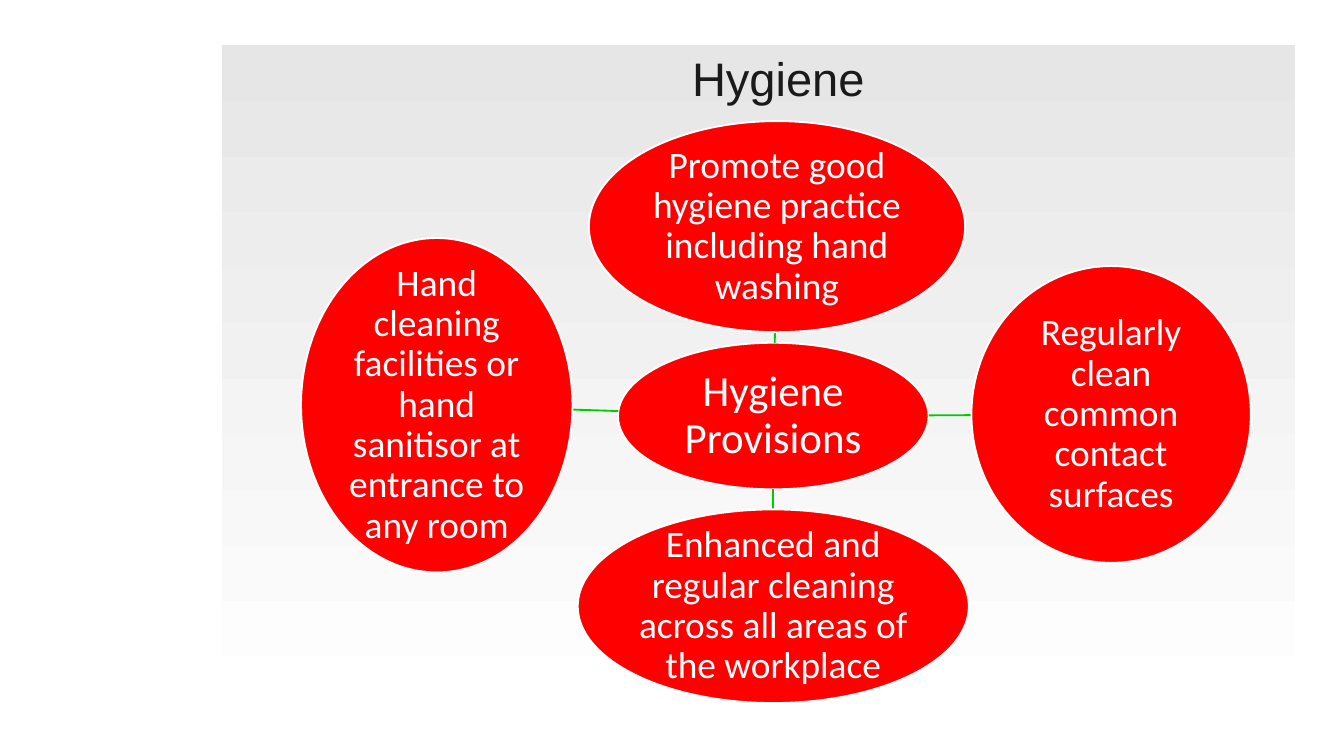
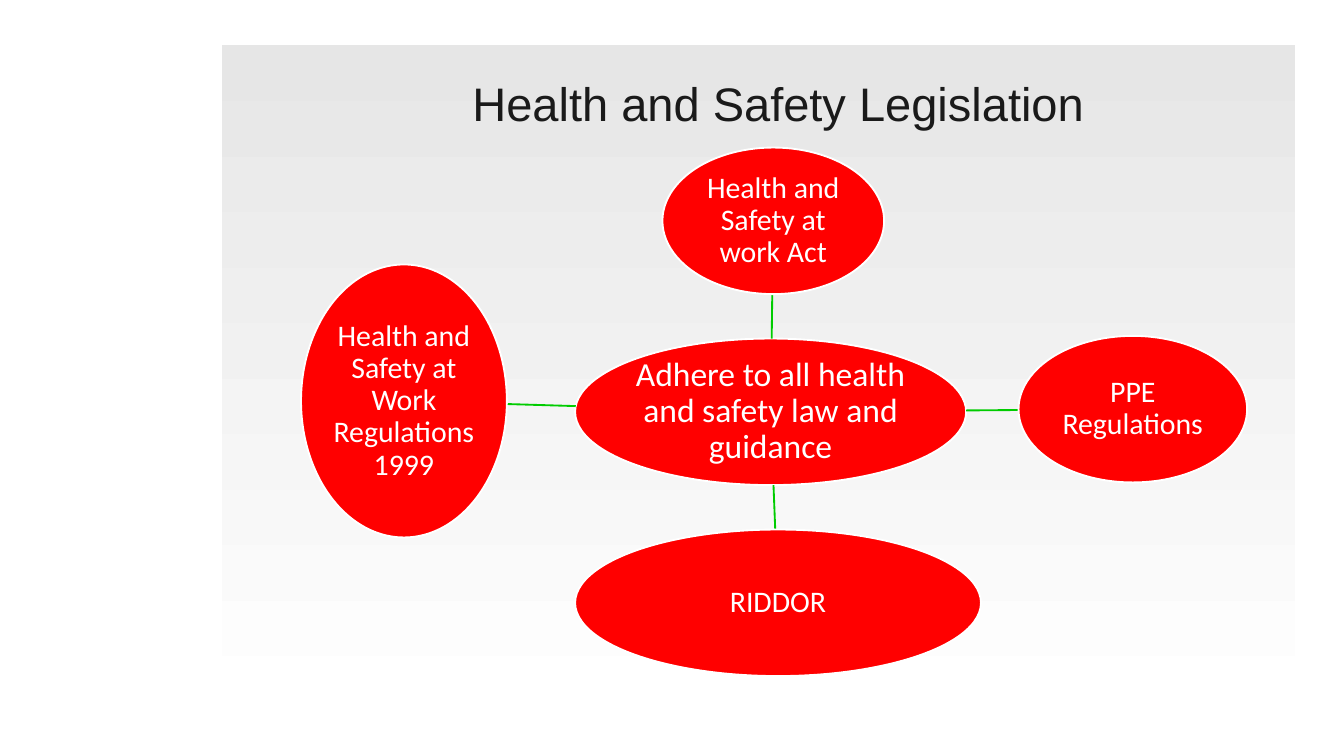
from dataclasses import dataclass
from math import hypot

from lxml.etree import SubElement
from pptx import Presentation
from pptx.dml.color import RGBColor
from pptx.enum.shapes import MSO_CONNECTOR, MSO_SHAPE
from pptx.enum.text import MSO_ANCHOR, PP_ALIGN
from pptx.oxml.ns import qn
from pptx.slide import Slide
from pptx.text.text import TextFrame
from pptx.util import Cm, Pt


@dataclass(frozen=True)
class Theme:
    bubble: RGBColor = RGBColor(0xFF, 0x00, 0x00)
    white: RGBColor = RGBColor(0xFF, 0xFF, 0xFF)
    spoke: RGBColor = RGBColor(0x00, 0xCC, 0x00)
    title: RGBColor = RGBColor(0x1A, 0x1A, 0x1A)
    panel_top: RGBColor = RGBColor(0xE6, 0xE6, 0xE6)
    title_font: str = "Arial"
    bubble_font: str = "Calibri"
    title_size: float = 25.2
    line_width: float = 1
    line_spacing: float = 0.9
    bubble_inset: float = 0.03


THEME = Theme()


@dataclass(frozen=True)
class Bubble:
    """An ellipse with a label; lengths in centimetres."""
    text: str
    left: float
    top: float
    width: float
    height: float

    @property
    def center(self) -> tuple[float, float]:
        return self.left + self.width / 2, self.top + self.height / 2

    def edge_towards(self, other: "Bubble") -> tuple[float, float]:
        """Point where the line to the other centre leaves this ellipse."""
        (x, y), (ox, oy) = self.center, other.center
        dx, dy = ox - x, oy - y
        t = 1 / hypot(dx / (self.width / 2), dy / (self.height / 2))
        return x + t * dx, y + t * dy


@dataclass(frozen=True)
class Diagram:
    title: str
    title_top: float
    hub: Bubble
    hub_size: float
    topics: tuple[Bubble, ...]
    topic_size: float


# Content: topics run clockwise from the top
DIAGRAMS = (
    Diagram(
        "Hygiene", 1.17,
        Bubble("Hygiene Provisions", 11.68, 6.48, 5.87, 2.77), 23,
        (
            Bubble("Promote good hygiene practice including hand washing",
                   11.13, 2.29, 7.11, 3.99),
            Bubble("Regularly clean common contact surfaces",
                   18.36, 5.03, 5.28, 5.61),
            Bubble("Enhanced and regular cleaning across all areas of the workplace",
                   10.92, 9.63, 7.39, 3.66),
            Bubble("Hand cleaning facilities or hand sanitisor at entrance to any room",
                   5.69, 4.5, 5.13, 6.32),
        ), 20),
    Diagram(
        "Health and Safety Legislation", 1.65,
        Bubble("Adhere to all health and safety law and guidance",
               10.87, 6.4, 7.39, 2.77), 18,
        (
            Bubble("Health and Safety at work Act", 12.52, 2.79, 4.19, 2.77),
            Bubble("PPE Regulations", 19.25, 6.35, 4.32, 2.77),
            Bubble("RIDDOR", 10.87, 10.01, 7.67, 2.77),
            Bubble("Health and Safety at Work Regulations 1999",
                   5.69, 5, 3.89, 5.16),
        ), 16),
)


def write_text(tf: TextFrame, text: str, font: str, size: float,
               color: RGBColor, anchor: MSO_ANCHOR, inset: float = 0) -> None:
    tf.text = text
    tf.word_wrap = True
    tf.vertical_anchor = anchor
    tf.margin_left = tf.margin_right = tf.margin_top = tf.margin_bottom = Cm(inset)
    p = tf.paragraphs[0]
    p.alignment = PP_ALIGN.CENTER
    p.line_spacing = THEME.line_spacing
    r = p.runs[0]
    r.font.name = font
    r.font.size = Pt(size)
    r.font.color.rgb = color


def add_panel(s: Slide) -> None:
    sp = s.shapes.add_shape(MSO_SHAPE.RECTANGLE, Cm(4.19), Cm(0.86), Cm(20.29), Cm(12.6))
    sp.shadow.inherit = False
    sp.line.fill.background()
    sp.fill.gradient()
    sp.fill.gradient_angle = 270
    for stop, position, color in zip(sp.fill.gradient_stops, (0, 1),
                                     (THEME.panel_top, THEME.white)):
        stop.position = position
        stop.color.rgb = color


def add_title(s: Slide, text: str, top: float) -> None:
    sp = s.shapes.add_textbox(Cm(5.72), Cm(top), Cm(17.98), Cm(0.84))
    write_text(sp.text_frame, text, THEME.title_font, THEME.title_size,
               THEME.title, MSO_ANCHOR.BOTTOM)


def add_bubble(s: Slide, bubble: Bubble, size: float) -> None:
    sp = s.shapes.add_shape(MSO_SHAPE.OVAL, Cm(bubble.left), Cm(bubble.top),
                            Cm(bubble.width), Cm(bubble.height))
    sp.shadow.inherit = False
    sp.fill.solid()
    sp.fill.fore_color.rgb = THEME.bubble
    sp.line.color.rgb = THEME.white
    sp.line.width = Pt(THEME.line_width)
    write_text(sp.text_frame, bubble.text, THEME.bubble_font, size,
               THEME.white, MSO_ANCHOR.MIDDLE, THEME.bubble_inset)


def add_spoke(s: Slide, hub: Bubble, topic: Bubble) -> None:
    x1, y1 = hub.edge_towards(topic)
    x2, y2 = topic.edge_towards(hub)
    line = s.shapes.add_connector(MSO_CONNECTOR.STRAIGHT, Cm(x1), Cm(y1), Cm(x2), Cm(y2))
    line.line.color.rgb = THEME.spoke
    line.line.width = Pt(THEME.line_width)
    SubElement(line._element.spPr, qn("a:effectLst"))


def add_diagram(s: Slide, diagram: Diagram) -> None:
    add_panel(s)
    add_bubble(s, diagram.hub, diagram.hub_size)
    for topic in diagram.topics:
        add_spoke(s, diagram.hub, topic)
        add_bubble(s, topic, diagram.topic_size)
    add_title(s, diagram.title, diagram.title_top)


def main() -> None:
    prs = Presentation()
    prs.slide_width, prs.slide_height = Cm(25.4), Cm(14.29)
    for diagram in DIAGRAMS:
        add_diagram(prs.slides.add_slide(prs.slide_layouts[6]), diagram)
    prs.save("out.pptx")


if __name__ == "__main__":
    main()
